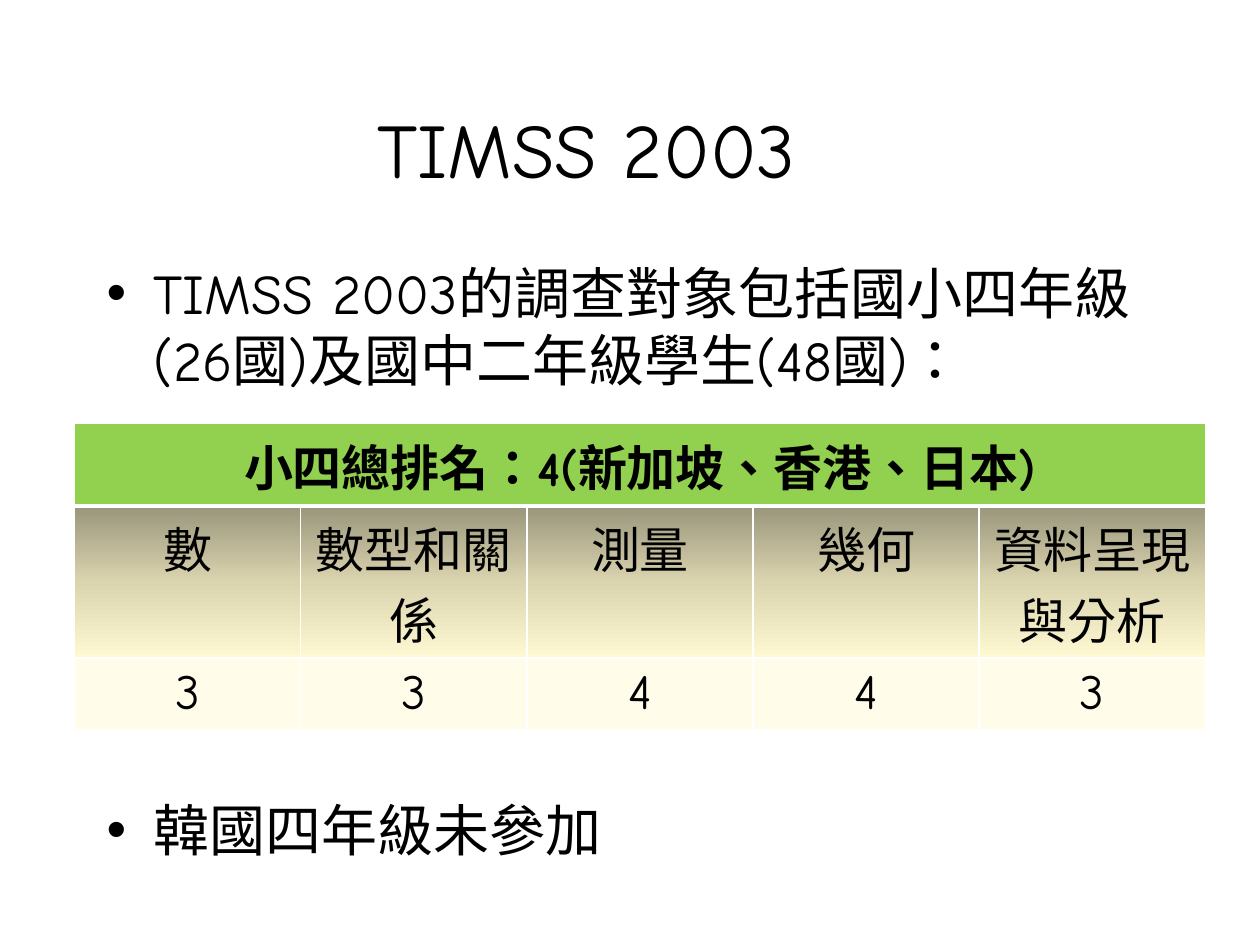
from dataclasses import dataclass

from lxml import etree
from pptx import Presentation
from pptx.dml.color import RGBColor
from pptx.enum.lang import MSO_LANGUAGE_ID
from pptx.enum.text import MSO_ANCHOR, PP_ALIGN
from pptx.oxml import parse_xml
from pptx.oxml.ns import nsdecls, qn
from pptx.util import Cm, Pt

CENTER, LEFT = PP_ALIGN.CENTER, PP_ALIGN.LEFT
TOP, MIDDLE, BOTTOM = MSO_ANCHOR.TOP, MSO_ANCHOR.MIDDLE, MSO_ANCHOR.BOTTOM
CHINESE = MSO_LANGUAGE_ID.TRADITIONAL_CHINESE


@dataclass(frozen=True)
class Theme:
    font: str = "Comic Neue"
    text: str = "000000"
    banner: str = "92D050"
    header: tuple = ((0, "99957B"), (50, "DAD4AF"), (100, "FFF9D3"))
    score: str = "FFFCEA"
    border: str = "FFFFFF"
    title_size: int = 44
    body_size: int = 32
    table_size: int = 28


THEME = Theme()
BULLETS = ("TIMSS 2003的調查對象包括國小四年級(26國)及國中二年級學生(48國)：",
           "韓國四年級未參加")
BANNER = "小四總排名：4(新加坡、香港、日本)"
RANKS = (("數", "3"), ("數型和關係", "3"), ("測量", "4"),
         ("幾何", "4"), ("資料呈現與分析", "3"))


def write(p, text, size, align=LEFT, bold=False):
    p.alignment = align
    r = p.add_run()
    r.text = text
    style = {"name": THEME.font, "size": Pt(size), "bold": bold,
             "language_id": CHINESE}
    for name, value in style.items():
        setattr(r.font, name, value)
    r.font.color.rgb = RGBColor.from_string(THEME.text)


def add_title(s, box, text):
    title = s.shapes.title
    for name, value in zip(("left", "top", "width", "height"), box):
        setattr(title, name, value)
    tf = title.text_frame
    tf.vertical_anchor = BOTTOM
    write(tf.paragraphs[0], text, THEME.title_size, CENTER)


def add_bullets(s, box, items, gap):
    tf = s.shapes.add_textbox(*box).text_frame
    tf.word_wrap = True
    for i, text in enumerate(items):
        p = tf.paragraphs[0] if i == 0 else tf.add_paragraph()
        pPr = p._p.get_or_add_pPr()
        pPr.set("marL", str(Cm(0.95)))
        pPr.set("indent", str(-Cm(0.95)))
        etree.SubElement(pPr, qn("a:buFont")).set("typeface", "Arial")
        etree.SubElement(pPr, qn("a:buChar")).set("char", "•")
        if i:
            p.space_before = gap
        write(p, text, THEME.body_size)


def set_borders(cell, bottom=1):
    tcPr = cell._tc.get_or_add_tcPr()
    for side, width in zip("LRTB", (1, 1, 1, bottom)):
        tcPr.append(parse_xml(
            f'<a:ln{side} {nsdecls("a")} w="{Pt(width)}"><a:solidFill>'
            f'<a:srgbClr val="{THEME.border}"/></a:solidFill></a:ln{side}>'))


def set_fill(cell, fill):
    if isinstance(fill, str):
        cell.fill.solid()
        cell.fill.fore_color.rgb = RGBColor.from_string(fill)
        return
    stops = "".join(f'<a:gs pos="{pos * 1000}"><a:srgbClr val="{color}"/></a:gs>'
                    for pos, color in fill)
    cell._tc.get_or_add_tcPr().append(parse_xml(
        f'<a:gradFill {nsdecls("a")} rotWithShape="1"><a:gsLst>{stops}</a:gsLst>'
        '<a:lin ang="5400000" scaled="0"/></a:gradFill>'))


def fill_cell(cell, text, fill, anchor, bold=False, bottom=1):
    cell.vertical_anchor = anchor
    set_borders(cell, bottom)
    set_fill(cell, fill)
    write(cell.text_frame.paragraphs[0], text, THEME.table_size, CENTER, bold)


def add_rank_table(s, box, banner, ranks):
    left, top, width, height = box
    table = s.shapes.add_table(3, len(ranks), left, top, width, height).table
    for row, share in zip(table.rows, (0.27, 0.5, 0.23)):
        row.height = int(height * share)
    # Banner across all columns
    table.cell(0, 0).merge(table.cell(0, len(ranks) - 1))
    fill_cell(table.cell(0, 0), banner, THEME.banner, MIDDLE, True, 3)
    # Topic above its rank
    for col, (topic, rank) in enumerate(ranks):
        fill_cell(table.cell(1, col), topic, THEME.header, TOP)
        fill_cell(table.cell(2, col), rank, THEME.score, MIDDLE)


def main():
    prs = Presentation()
    prs.slide_width, prs.slide_height = Cm(25.4), Cm(19.05)
    s = prs.slides.add_slide(prs.slide_layouts[5])
    add_title(s, (Cm(2.29), Cm(1.12), Cm(19.08), Cm(2.92)), "TIMSS 2003")
    add_bullets(s, (Cm(1.9), Cm(5.08), Cm(21.4), Cm(10.16)), BULLETS, Pt(230))
    add_rank_table(s, (Cm(1.5), Cm(8.54), Cm(22.8), Cm(6.14)), BANNER, RANKS)
    prs.save("out.pptx")


if __name__ == "__main__":
    main()
